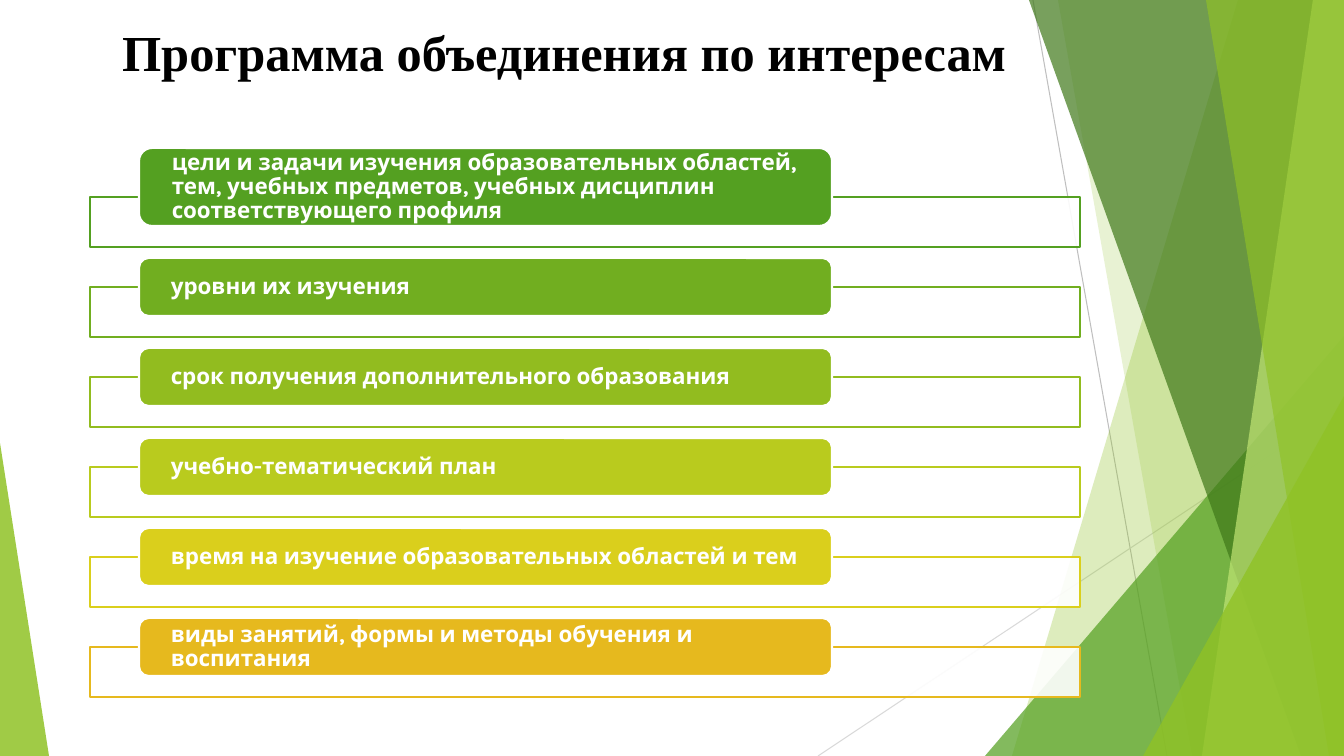
from dataclasses import dataclass
from lxml.etree import SubElement as Sub
from pptx import Presentation
from pptx.dml.color import RGBColor as RGB
from pptx.enum.shapes import MSO_CONNECTOR as Wire, MSO_SHAPE as Form
from pptx.enum.text import MSO_ANCHOR as Anchor, MSO_AUTO_SIZE as Fit, PP_ALIGN as Align
from pptx.oxml.ns import qn
from pptx.util import Pt

SCALE = 914400 / 100.8


@dataclass(frozen=True)
class Theme:
    """Colours, fonts and type sizes of the slide."""
    white: str = "FFFFFF"
    black: str = "000000"
    lime: str = "90C226"
    leaf: str = "54A021"
    moss: str = "3F7819"
    pale: str = "C0E474"
    grey: str = "BFBFBF"
    mist: str = "D9D9D9"
    head: str = "Times New Roman"
    body: str = "Karla"
    large: int = 36
    small: int = 16


T = Theme()
ITEMS = (
    ("цели и задачи изучения образовательных областей, тем, учебных предметов, "
     "учебных дисциплин соответствующего профиля", "54A021", 78),
    ("уровни их изучения", "71AE20", 58),
    ("срок получения дополнительного образования", "92BC1F", 58),
    ("учебно-тематический план", "B9CB1E", 58),
    ("время на изучение образовательных областей и тем", "DACF1C", 58),
    ("виды занятий, формы и методы обучения и воспитания", "E6B91E", 58),
)


def px(*nums):
    """Turn pixels into EMU."""
    return [round(n * SCALE) for n in nums]


def paint(shape, color, alpha=100, edge=None):
    """Fill a shape, set its outline and drop its shadow."""
    shape.shadow.inherit = False
    shape.fill.solid()
    shape.fill.fore_color.rgb = RGB.from_string(color)
    if alpha < 100:
        tint = shape.element.spPr.find(qn("a:solidFill"))[0]
        Sub(tint, qn("a:alpha"), val=str(alpha * 1000))
    if edge:
        shape.line.color.rgb = RGB.from_string(edge)
        shape.line.width = Pt(1.5)
    else:
        shape.line.fill.background()


def write(para, text, font, size, color):
    """Add one bold run to a paragraph."""
    run = para.add_run()
    run.text = text
    run.font.name, run.font.size, run.font.bold = font, Pt(size), True
    run.font.color.rgb = RGB.from_string(color)


def thread(slide, ends, color):
    """Draw a thin line between two points."""
    line = slide.shapes.add_connector(Wire.STRAIGHT, *px(*ends))
    line.line.color.rgb = RGB.from_string(color)
    line.line.width = Pt(0.75)
    Sub(line.element.spPr, qn("a:effectLst"))


def shard(slide, box, top, foot, color, alpha):
    """Draw a slanted band from its top and foot to the right edge of the box."""
    left, head, width, height = box
    right, base = left + width, head + height
    pen = slide.shapes.build_freeform(left + top, head, scale=SCALE)
    pen.add_line_segments([(right, head), (right, base), (left + foot, base)])
    paint(pen.convert_to_shape(), color, alpha)


def peak(slide, box, tip, color, alpha):
    """Draw a triangle with its tip at a share of the width."""
    shape = slide.shapes.add_shape(Form.ISOSCELES_TRIANGLE, *px(*box))
    shape.adjustments[0] = tip
    paint(shape, color, alpha)


def facets(slide, box):
    """Draw the green facets at both sides of the box."""
    left, top, width, height = box
    right, base = left + width, top + height

    def corner(wide, high, color, alpha):
        """Draw a triangle in the lower right corner."""
        peak(slide, (right - wide, base - high, wide, high), 1, color, alpha)

    thread(slide, (left + 1033, top, left + 1167, base), T.grey)
    thread(slide, (right, top + 406, left + 818, base), T.mist)
    shard(slide, box, 1238, 1012, T.lime, 30)
    shard(slide, box, 1058, 1192, T.lime, 20)
    corner(359, 420, T.leaf, 72)
    shard(slide, box, 1029, 1301, T.moss, 70)
    shard(slide, box, 1313, 1202, T.pale, 70)
    shard(slide, box, 1206, 1329, T.lime, 65)
    corner(201, 360, T.lime, 80)
    peak(slide, (left, base - 313, 49, 313), 0, T.lime, 85)


def title(slide, box):
    """Place the slide title."""
    shape = slide.shapes.title
    shape.left, shape.top, shape.width, shape.height = px(*box)
    frame = shape.text_frame
    frame.auto_size, frame.word_wrap = Fit.NONE, True
    frame.vertical_anchor = Anchor.TOP
    para = frame.paragraphs[0]
    para.alignment = Align.LEFT
    write(para, "Программа объединения по интересам", T.head, T.large, T.black)


def topic(slide, box, text, color, high):
    """Draw an outlined bar with a filled tab over its top edge."""
    left, top, width, height = box
    bar = slide.shapes.add_shape(Form.RECTANGLE, *px(*box))
    paint(bar, T.white, 90, color)
    place = px(left + 49, top + 29 - high, width * 7 // 10, high)
    tab = slide.shapes.add_shape(Form.ROUNDED_RECTANGLE, *place)
    paint(tab, color, edge=T.white)
    frame = tab.text_frame
    frame.word_wrap, frame.vertical_anchor = True, Anchor.MIDDLE
    frame.margin_left, frame.margin_right = px(29, 29)
    frame.margin_top = frame.margin_bottom = 0
    para = frame.paragraphs[0]
    para.alignment, para.line_spacing = Align.LEFT, 0.9
    write(para, text, T.body, T.small, T.white)


def topics(slide, box):
    """Stack the topics evenly in the box."""
    left, top, width, height = box
    bar = 50
    step = (height - bar) // (len(ITEMS) - 1)
    for row, item in enumerate(ITEMS):
        topic(slide, (left, top + row * step, width, bar), *item)


def main():
    """Build and save the slide."""
    deck = Presentation()
    deck.slide_width, deck.slide_height = px(1344, 756)
    slide = deck.slides.add_slide(deck.slide_layouts[5])
    facets(slide, (0, 0, 1344, 756))
    title(slide, (112, 16, 948, 103))
    topics(slide, (90, 197, 990, 500))
    deck.save("out.pptx")


if __name__ == "__main__":
    main()
